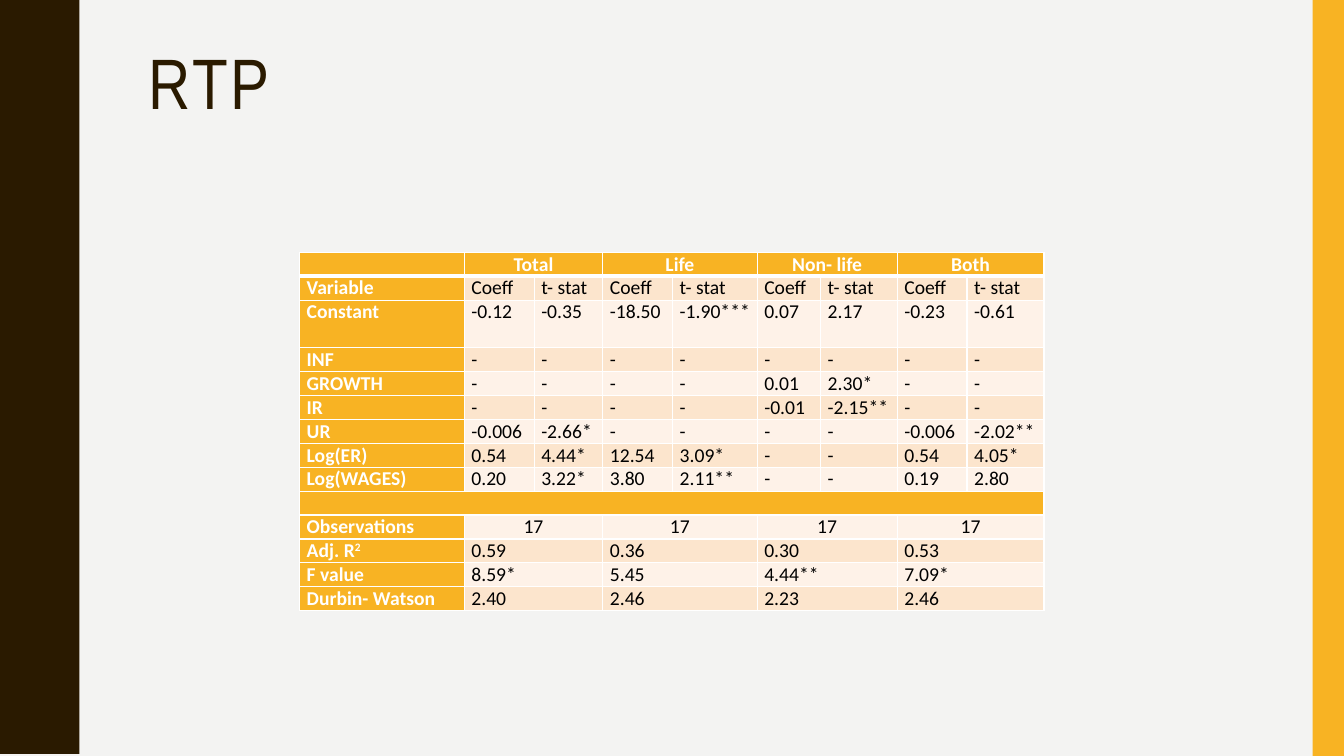
from dataclasses import dataclass

from lxml import etree
from pptx import Presentation
from pptx import util as u
from pptx.dml import color
from pptx.enum import shapes, text
from pptx.oxml import ns


@dataclass(frozen=True)
class Theme:
    back: str = "F3F3F2"
    dark: str = "2A1A00"
    gold: str = "F8B323"
    bands: tuple = ("FEF2E8", "FCE5CD")
    white: str = "FFFFFF"
    black: str = "000000"
    head: str = "Arial Narrow"
    body: str = "Calibri"
    big: int = 51
    small: int = 14
    thin: int = 1
    thick: int = 3


theme = Theme()


def paint(fill, tone):
    fill.solid()
    fill.fore_color.rgb = color.RGBColor.from_string(tone)


def border(cell, widths):
    props = cell._tc.get_or_add_tcPr()
    for spot, (side, width) in enumerate(zip("LRTB", widths)):
        line = etree.Element(ns.qn(f"a:ln{side}"), w=str(u.Pt(width)))
        solid = etree.SubElement(line, ns.qn("a:solidFill"))
        etree.SubElement(solid, ns.qn("a:srgbClr"), val=theme.white)
        props.insert(spot, line)


deck = Presentation()
deck.slide_width, deck.slide_height = u.Cm(33.87), u.Cm(19.05)
slide = deck.slides.add_slide(deck.slide_layouts[5])
paint(slide.background.fill, theme.back)

period = 3.81
rise = [(1.98, 0), (1.98, 0.18), (2.01, 0.36), (2.03, 0.51),
        (2.06, 0.64), (2.11, 0.74), (2.16, 0.84), (2.22, 0.95)]
half = rise + [(4.44 - x, period / 2 - y) for x, y in rise[-2::-1]]
cycle = half + [(x, period - y) for x, y in half[-2::-1]]
edge = [(x, y + period * turn) for turn in range(5) for x, y in cycle]
pen = slide.shapes.build_freeform(0, 0, scale=u.Cm(1))
pen.add_line_segments(edge + [(0, 19.05)], close=True)
wave = pen.convert_to_shape()
stripe = slide.shapes.add_shape(
    shapes.MSO_SHAPE.RECTANGLE, u.Cm(33.08), 0, u.Cm(0.79), u.Cm(19.05))
for shape, tone in ((wave, theme.dark), (stripe, theme.gold)):
    paint(shape.fill, tone)
    shape.line.fill.background()
    shape.shadow.inherit = False

title = slide.shapes.title
title.left, title.top = u.Cm(3.48), u.Cm(1.07)
title.width, title.height = u.Cm(28.27), u.Cm(4.14)
frame = title.text_frame
frame.text = "RTP"
frame.auto_size = text.MSO_AUTO_SIZE.NONE
frame.vertical_anchor = text.MSO_ANCHOR.TOP
para = frame.paragraphs[0]
para.alignment = text.PP_ALIGN.LEFT
para.line_spacing = 0.9
para.font.name, para.font.size = theme.head, u.Pt(theme.big)
para.font.color.rgb = color.RGBColor.from_string(theme.dark)
para.runs[0]._r.get_or_add_rPr().set("spc", "200")

rows = [line.split("|") for line in (
    "|Total|Life|Non- life|Both",
    "Variable|Coeff|t- stat|Coeff|t- stat|Coeff|t- stat|Coeff|t- stat",
    "Constant|-0.12|-0.35|-18.50|-1.90***|0.07|2.17|-0.23|-0.61",
    "INF|-|-|-|-|-|-|-|-",
    "GROWTH|-|-|-|-|0.01|2.30*|-|-",
    "IR|-|-|-|-|-0.01|-2.15**|-|-",
    "UR|-0.006|-2.66*|-|-|-|-|-0.006|-2.02**",
    "Log(ER)|0.54|4.44*|12.54|3.09*|-|-|0.54|4.05*",
    "Log(WAGES)|0.20|3.22*|3.80|2.11**|-|-|0.19|2.80",
    "",
    "Observations|17|17|17|17",
    "Adj. R|0.59|0.36|0.30|0.53",
    "F value|8.59*|5.45|4.44**|7.09*",
    "Durbin- Watson|2.40|2.46|2.23|2.46",
)]
widths = [4.15, 1.76, 1.73, 1.76, 2.13, 1.6, 1.93, 1.76, 1.94]
table = slide.shapes.add_table(
    len(rows), len(widths), u.Cm(7.55), u.Cm(6.36),
    u.Cm(sum(widths)), u.Cm(0.6 * (len(rows) + 1))).table
table.first_row = table.horz_banding = False
for col, width in zip(table.columns, widths):
    col.width = u.Cm(width)

for r, row in enumerate(rows):
    table.rows[r].height = u.Cm(1.2 if row[0] == "Constant" else 0.6)
    pairs = len(row) == 5
    for c in range(len(widths)):
        cell = table.cell(r, c)
        gold = r == 0 or c == 0 or len(row) == 1
        paint(cell.fill, theme.gold if gold else theme.bands[r % 2])
        border(cell, (theme.thin, theme.thin,
                      theme.thick if r == 1 else theme.thin,
                      theme.thick if r == 0 else theme.thin))
        cell.margin_left = cell.margin_right = u.Cm(0.18)
        cell.margin_top = cell.margin_bottom = 0
        spot = (c + 1) // 2 if pairs else c
        lead = not pairs or c == 0 or c % 2 == 1
        if lead and spot < len(row) and row[spot]:
            cell.text = row[spot]
        para = cell.text_frame.paragraphs[0]
        mid = r == 0 or (row[0] == "Observations" and c > 0)
        para.alignment = text.PP_ALIGN.CENTER if mid else text.PP_ALIGN.JUSTIFY
        para.font.name, para.font.size = theme.body, u.Pt(theme.small)
        para.font.bold = gold
        para.font.color.rgb = color.RGBColor.from_string(
            theme.white if gold else theme.black)
        if cell.text == "Adj. R":
            power = para.add_run()
            power.text = "2"
            power._r.get_or_add_rPr().set("baseline", "30000")
    if len(row) == 1:
        table.cell(r, 0).merge(table.cell(r, len(widths) - 1))
    elif pairs:
        for c in range(1, len(widths), 2):
            table.cell(r, c).merge(table.cell(r, c + 1))

deck.save("out.pptx")
